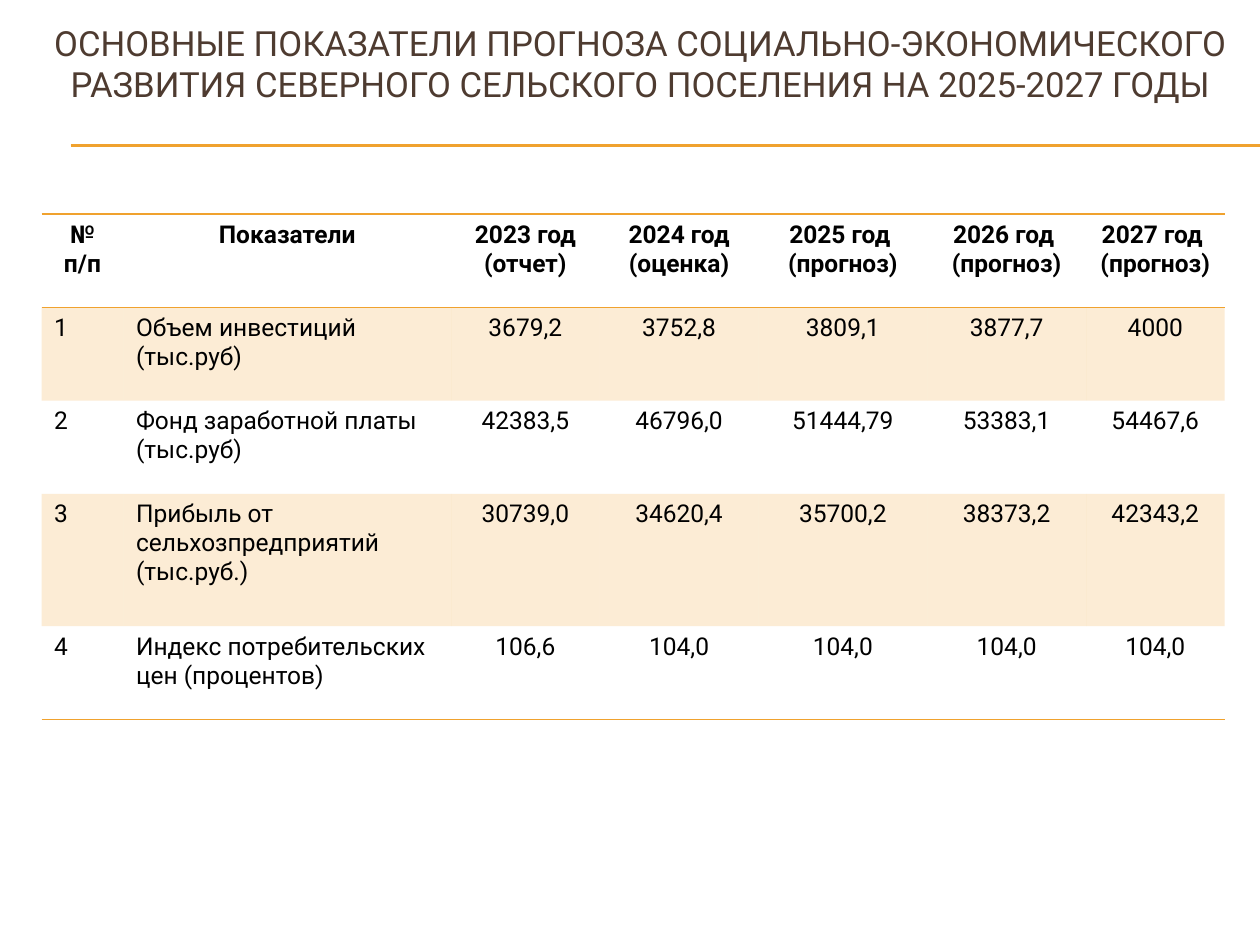
import dataclasses

import pptx
import pptx.dml.color
import pptx.enum.shapes
import pptx.enum.text
import pptx.oxml
import pptx.oxml.ns
import pptx.util
from pptx.util import Inches

ALIGN = pptx.enum.text.PP_ALIGN
qn = pptx.oxml.ns.qn


@dataclasses.dataclass(frozen=True)
class Theme:
    font: str = "Roboto"
    head: str = "4E3B30"
    body: str = "000000"
    gold: str = "F0A22E"
    tint: int = 20
    big: float = 19.8
    small: float = 14
    rule: float = 0.75
    edge: float = 1


THEME = Theme()
TITLE = ("ОСНОВНЫЕ ПОКАЗАТЕЛИ ПРОГНОЗА СОЦИАЛЬНО-ЭКОНОМИЧЕСКОГО "
         "РАЗВИТИЯ СЕВЕРНОГО СЕЛЬСКОГО ПОСЕЛЕНИЯ НА 2025-2027 ГОДЫ")
ROWS = [
    ["№ п/п", "Показатели", "2023 год (отчет)", "2024 год (оценка)"]
    + [f"{year} год \n(прогноз)" for year in (2025, 2026, 2027)],
    ["1", "Объем инвестиций (тыс.руб)",
     "3679,2", "3752,8", "3809,1", "3877,7", "4000"],
    ["2", "Фонд заработной платы (тыс.руб)",
     "42383,5", "46796,0", "51444,79", "53383,1", "54467,6"],
    ["3", "Прибыль от сельхозпредприятий (тыс.руб.)",
     "30739,0", "34620,4", "35700,2", "38373,2", "42343,2"],
    ["4", "Индекс потребительских цен (процентов)",
     "106,6", "104,0", "104,0", "104,0", "104,0"],
]
WIDTHS = [0.65, 2.6, 1.18, 1.26, 1.34, 1.26, 1.1]
HEIGHTS = [0.74, 0.74, 0.74, 1.05, 0.74]


def color(code):
    return pptx.dml.color.RGBColor.from_string(code)


def write(frame, text, size=THEME.small, ink=THEME.body, bold=False,
          align=ALIGN.LEFT):
    frame.text = text
    for para in frame.paragraphs:
        para.alignment = align
        for run in para.runs:
            font = run.font
            font.name, font.size, font.bold = THEME.font, pptx.util.Pt(size), bold
            font.color.rgb = color(ink)


def add_title(slide, left, top, width, height):
    shape = slide.shapes.title
    shape.left, shape.top = Inches(left), Inches(top)
    shape.width, shape.height = Inches(width), Inches(height)
    frame = shape.text_frame
    frame.word_wrap = True
    frame.auto_size = pptx.enum.text.MSO_AUTO_SIZE.NONE
    frame.vertical_anchor = pptx.enum.text.MSO_ANCHOR.MIDDLE
    frame.margin_left = frame.margin_right = frame.margin_top = Inches(0.05)
    frame.margin_bottom = Inches(0.56)
    write(frame, TITLE, size=THEME.big, ink=THEME.head, align=ALIGN.CENTER)


def add_rule(slide, left, top, width):
    """Draw the double gold line under the title."""
    for y in (top, top + 0.01):
        line = slide.shapes.add_connector(
            pptx.enum.shapes.MSO_CONNECTOR.STRAIGHT,
            Inches(left), Inches(y), Inches(left + width), Inches(y))
        line.line.color.rgb = color(THEME.gold)
        line.line.width = pptx.util.Pt(THEME.rule)
        line._element.spPr.append(pptx.oxml.parse_xml(
            f'<a:effectLst {pptx.oxml.ns.nsdecls("a")}/>'))


def tint(cell):
    cell.fill.solid()
    cell.fill.fore_color.rgb = color(THEME.gold)
    code = cell._tc.tcPr.find(".//" + qn("a:srgbClr"))
    code.append(pptx.oxml.parse_xml(
        f'<a:alpha {pptx.oxml.ns.nsdecls("a")} val="{THEME.tint * 1000}"/>'))


def border(cell, sides):
    """Draw gold lines on the given sides (T, B) and clear the rest."""
    for spot, side in enumerate("LRTB"):
        paint = (f'<a:solidFill><a:srgbClr val="{THEME.gold}"/></a:solidFill>'
                 if side in sides else "<a:noFill/>")
        cell._tc.tcPr.insert(spot, pptx.oxml.parse_xml(
            f'<a:ln{side} {pptx.oxml.ns.nsdecls("a")} '
            f'w="{pptx.util.Pt(THEME.edge)}">{paint}</a:ln{side}>'))


def add_grid(slide, left, top, width, height):
    table = slide.shapes.add_table(
        len(ROWS), len(WIDTHS), Inches(left), Inches(top),
        Inches(width), Inches(height)).table
    table.first_row = table.horz_banding = False
    for col, size in zip(table.columns, WIDTHS):
        col.width = Inches(size)
    edges = {0: "TB", 1: "T", len(ROWS) - 1: "B"}
    for r, (row, size) in enumerate(zip(ROWS, HEIGHTS)):
        table.rows[r].height = Inches(size)
        for c, text in enumerate(row):
            cell = table.cell(r, c)
            mid = r == 0 or c > 1
            write(cell.text_frame, text, bold=r == 0,
                  align=ALIGN.CENTER if mid else ALIGN.LEFT)
            if r % 2:
                tint(cell)
            else:
                cell.fill.background()
            border(cell, edges.get(r, ""))


def main():
    deck = pptx.Presentation()
    deck.slide_width, deck.slide_height = Inches(10), Inches(7.5)
    slide = deck.slides.add_slide(deck.slide_layouts.get_by_name("Title Only"))
    add_rule(slide, 0.56, 1.15, 9.44)
    add_title(slide, 0.33, 0.36, 9.5, 0.79)
    add_grid(slide, 0.33, 1.7, sum(WIDTHS), sum(HEIGHTS))
    deck.save("out.pptx")


if __name__ == "__main__":
    main()
